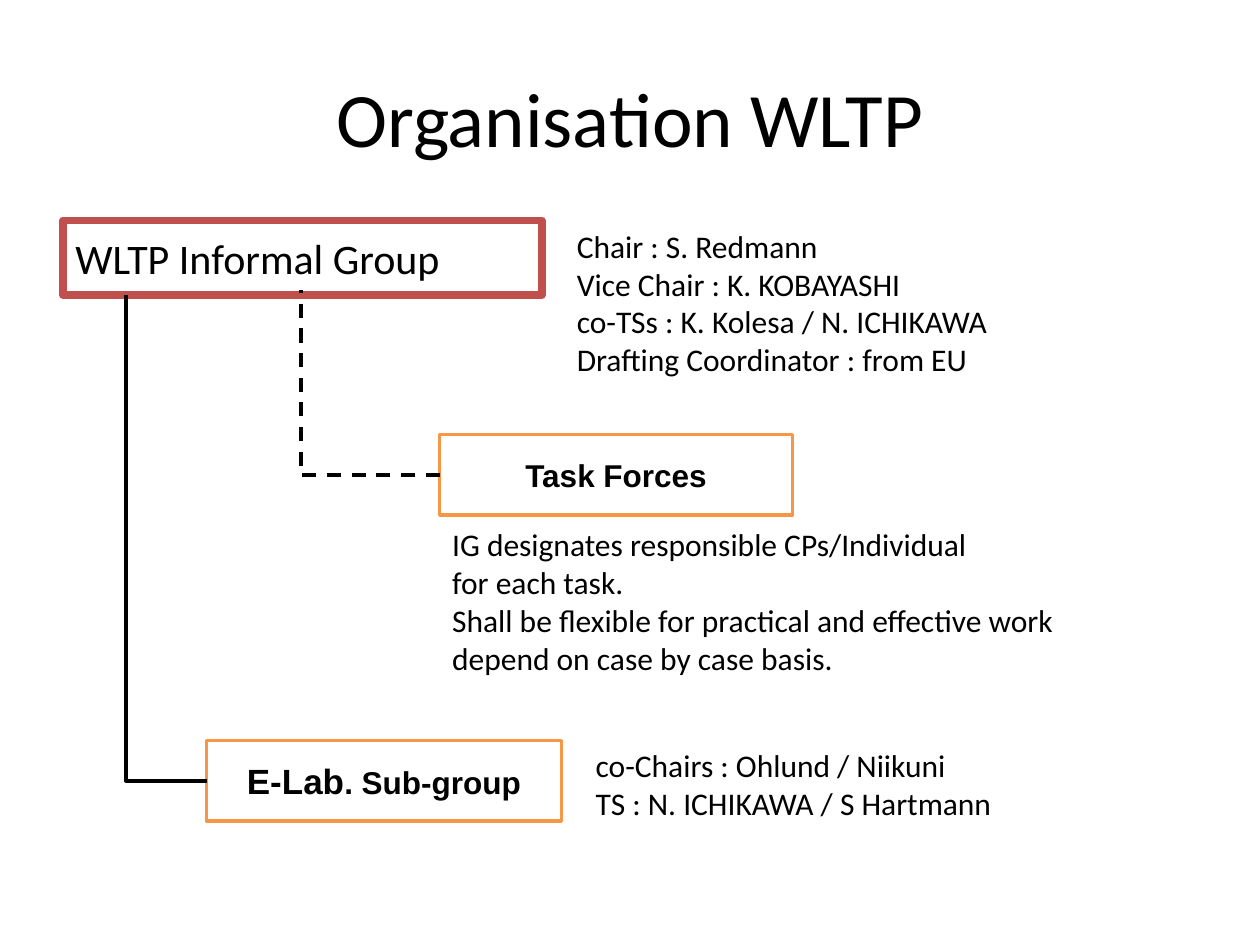
from lxml import etree
from pptx import Presentation, util as u
from pptx.dml.color import RGBColor
from pptx.enum import dml, shapes, text
from pptx.oxml.ns import qn

COLORS = {"ink": "000000", "paper": "FFFFFF", "group": "C0504D", "sub": "F79646"}


def rgb(name):
    return RGBColor.from_string(COLORS[name])


class Chart:
    """Organisation chart style and the slide it is drawn on; lengths in points."""

    def __init__(self, slide):
        self.s = slide

    def style(self, run, size, font="Calibri", bold=False):
        run.font.name, run.font.size, run.font.bold = font, u.Pt(size), bold
        run.font.color.rgb = rgb("ink")

    def note(self, box, lines, size=18, align=text.PP_ALIGN.LEFT,
             anchor=text.MSO_ANCHOR.TOP):
        tf = self.s.shapes.add_textbox(*map(u.Pt, box)).text_frame
        tf.word_wrap = True
        tf.vertical_anchor = anchor
        if align == text.PP_ALIGN.LEFT:
            tf.margin_right = 0
        tf.text = "\n".join(lines)
        for p in tf.paragraphs:
            p.alignment = align
            for r in p.runs:
                self.style(r, size)

    def box(self, box, parts, line, width=2, fill=None, font="Arial", bold=True,
            align=text.PP_ALIGN.CENTER):
        sp = self.s.shapes.add_shape(shapes.MSO_SHAPE.RECTANGLE, *map(u.Pt, box))
        sp.shadow.inherit = False
        if fill:
            sp.fill.solid()
            sp.fill.fore_color.rgb = rgb(fill)
        else:
            sp.fill.background()
        sp.line.color.rgb, sp.line.width = rgb(line), u.Pt(width)
        tf = sp.text_frame
        tf.vertical_anchor = text.MSO_ANCHOR.MIDDLE
        p = tf.paragraphs[0]
        p.alignment = align
        for words, size in parts:
            r = p.add_run()
            r.text = words
            self.style(r, size, font, bold)

    def elbow(self, x1, y1, x2, y2, dash=None):
        """Run down from (x1, y1), then right to (x2, y2)."""
        c = self.s.shapes.add_connector(shapes.MSO_CONNECTOR.ELBOW,
                                        *map(u.Pt, (x1, y1, x2, y2)))
        c.line.color.rgb, c.line.width = rgb("ink"), u.Pt(2)
        if dash:
            c.line.dash_style = dash
        # One-bend outline, turned so that the corner is at the lower left
        pr = c._element.spPr
        pr.find(qn("a:prstGeom")).set("prst", "bentConnector2")
        pr.find(qn("a:xfrm")).set("rot", str(180 * 60000))
        etree.SubElement(pr, qn("a:effectLst"))


def main():
    prs = Presentation()
    prs.slide_width, prs.slide_height = u.Pt(720), u.Pt(540)
    chart = Chart(prs.slides.add_slide(prs.slide_layouts[6]))

    # Title
    chart.note((36, 21.6, 648, 90), ["Organisation WLTP"], 44,
               text.PP_ALIGN.CENTER, text.MSO_ANCHOR.MIDDLE)

    # Informal group
    chart.box((36, 126, 273.6, 42.5), [("WLTP Informal Group", 24)], "group", 4.5,
              "paper", "Calibri", False, text.PP_ALIGN.LEFT)
    chart.note((322.5, 126, 322.5, 110), [
        "Chair : S. Redmann",
        "Vice Chair : K. KOBAYASHI",
        "co-TSs : K. Kolesa / N. ICHIKAWA",
        "Drafting Coordinator : from EU"])

    # Laboratory sub-group
    chart.box((118, 423.2, 202.8, 46), [("E-Lab", 20), (". Sub-group", 18)], "sub")
    chart.note((333.3, 422.6, 243.4, 51), [
        "co-Chairs : Ohlund / Niikuni",
        "TS : N. ICHIKAWA / S Hartmann"])

    # Task forces
    chart.box((251.3, 248.4, 201.6, 46), [("Task Forces", 18)], "sub")
    chart.note((251.3, 296.7, 432.7, 110), [
        "IG designates responsible CPs/Individual",
        "for each task.",
        "Shall be flexible for practical and effective work",
        "depend on case by case basis."])

    # Reporting lines
    chart.elbow(72, 168.5, 118, 446.2)
    chart.elbow(172, 165.6, 251.3, 271.4, dml.MSO_LINE.DASH)

    prs.save("out.pptx")


if __name__ == "__main__":
    main()
